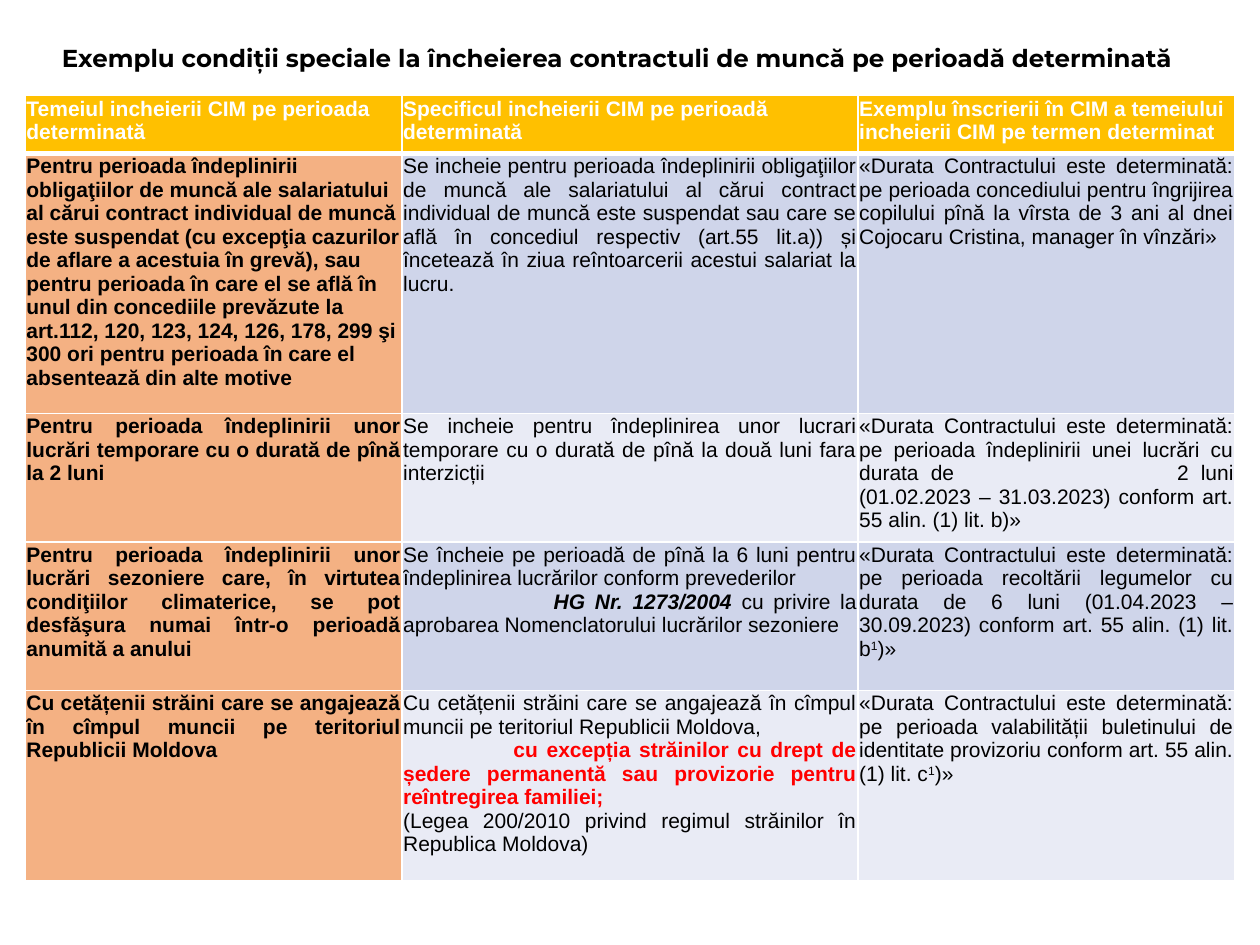
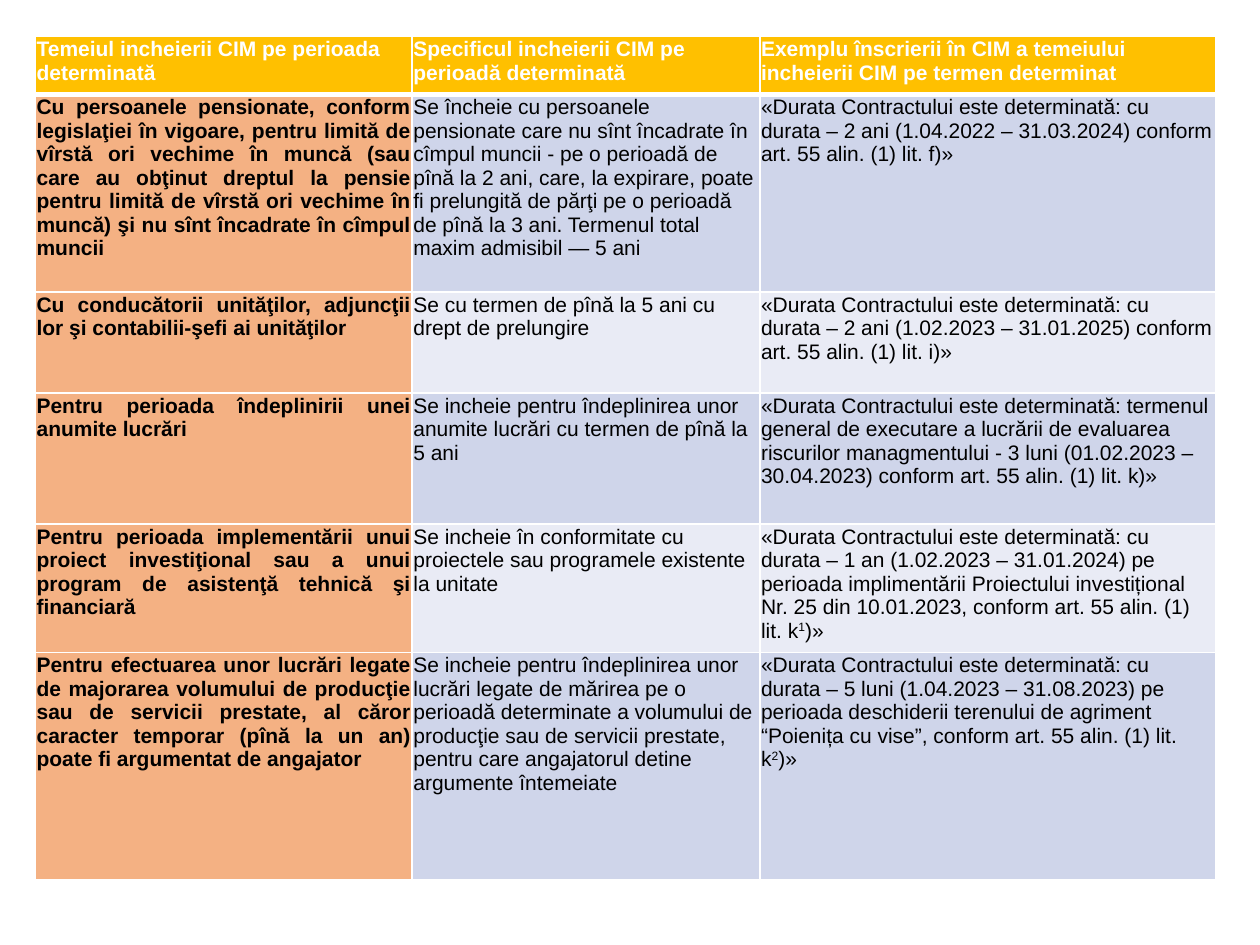
"""Build two slides of tables on fixed-term employment contracts."""
from pptx import Presentation
from pptx.util import Pt
from pptx.dml.color import RGBColor
from pptx.enum import text
from pptx.oxml import parse_xml
from pptx.oxml.ns import nsdecls

HUE = {"head": "FFC000", "basis": "F4B183", "odd": "CFD5EA", "even": "E9EBF5",
       "white": "FFFFFF", "black": "000000", "red": "FF0000"}
ALIGN = {"l": text.PP_ALIGN.LEFT, "j": text.PP_ALIGN.JUSTIFY, "c": text.PP_ALIGN.CENTER}
INDENT = {"/": 86, "!": 63}
TAB = 178
LEAD = "«Durata Contractului este determinată: "


def style(run, face, size, bold, hue):
    font = run.font
    font.name, font.size, font.bold = face, Pt(size), bold
    font.color.rgb = RGBColor.from_string(HUE[hue])


def fill_cell(cell, words, hue, side, bold, ink, base):
    """Marks: | splits runs, ^ raises, / is bold italic, ! is bold red."""
    cell.margin_left = cell.margin_right = cell.margin_top = cell.margin_bottom = Pt(0.72)
    props = cell._tc.get_or_add_tcPr()
    for edge in "LRTB":
        wide = 3 if (edge, base) in (("B", 0), ("T", 1)) else 1
        props.append(parse_xml(
            f'<a:ln{edge} {nsdecls("a")} w="{Pt(wide)}"><a:solidFill>'
            f'<a:srgbClr val="{HUE["white"]}"/></a:solidFill></a:ln{edge}>'))
    cell.fill.solid()
    cell.fill.fore_color.rgb = RGBColor.from_string(HUE[hue])
    frame = cell.text_frame
    for num, line in enumerate(words.split("\n")):
        para = frame.add_paragraph() if num else frame.paragraphs[0]
        para.alignment = ALIGN[side]
        form = para._p.get_or_add_pPr()
        if line[1:2] in INDENT:
            form.set("indent", str(Pt(INDENT[line[1]])))
        if "\t" in line:
            form.append(parse_xml(f'<a:tabLst {nsdecls("a")}>'
                                  f'<a:tab pos="{Pt(TAB)}" algn="l"/></a:tabLst>'))
        for part in filter(None, line.split("|")):
            mark = part[0] if part[0] in "^/!" else ""
            run = para.add_run()
            run.text = part[len(mark):]
            style(run, "Arial", 12, bold or mark in ("/", "!"),
                  "red" if mark == "!" else ink)
            if mark == "/":
                run.font.italic = True
            if mark == "^":
                run._r.get_or_add_rPr().set("baseline", "30000")


HEAD = ("Temeiul incheierii CIM pe perioada determinată",
        "Specificul incheierii CIM pe perioadă determinată",
        "Exemplu înscrierii în CIM a temeiului incheierii CIM pe termen determinat")

FIRST = [
    ("Pentru perioada îndeplinirii obligaţiilor de muncă ale salariatului al cărui contract "
     "individual de muncă este suspendat (cu excepţia cazurilor de aflare a acestuia în grevă), "
     "sau pentru perioada în care el se află în unul din concediile prevăzute la art.112, 120, "
     "123, 124, 126, 178, 299 şi 300 ori pentru perioada în care el absentează din alte motive",
     "Se incheie pentru perioada îndeplinirii obligaţiilor de muncă ale salariatului al cărui "
     "contract individual de muncă este suspendat sau care se află în concediul respectiv "
     "(art.55 lit.a)) și încetează în ziua reîntoarcerii acestui salariat la lucru.",
     LEAD + "pe perioada concediului pentru îngrijirea copilului pînă la vîrsta de 3 ani al "
     "dnei Cojocaru Cristina, manager în vînzări»"),
    ("Pentru perioada îndeplinirii unor lucrări temporare cu o durată de pînă la 2 luni",
     "Se incheie pentru îndeplinirea unor lucrari temporare cu o durată de pînă la două luni "
     "fara interzicții",
     LEAD + "pe perioada îndeplinirii unei lucrări cu durata de\t2 luni "
     "(01.02.2023 – 31.03.2023) conform art. 55 alin. (1) lit. b)»"),
    ("Pentru perioada îndeplinirii unor lucrări sezoniere care, în virtutea condiţiilor "
     "climaterice, se pot desfăşura numai într-o perioadă anumită a anului",
     "Se încheie pe perioadă de pînă la 6 luni pentru îndeplinirea lucrărilor conform "
     "prevederilor\n|/HG Nr. 1273/2004 |cu privire la aprobarea Nomenclatorului lucrărilor "
     "sezoniere",
     LEAD + "pe perioada recoltării legumelor cu durata de 6 luni (01.04.2023 – 30.09.2023) "
     "conform art. 55 alin. (1) lit. b|^1|)»"),
    ("Cu cetățenii străini care se angajează în cîmpul muncii pe teritoriul Republicii Moldova",
     "Cu cetățenii străini care se angajează în cîmpul muncii pe teritoriul Republicii Moldova,"
     "\n|!cu excepția străinilor cu drept de ședere permanentă sau provizorie pentru "
     "reîntregirea familiei;\n(Legea 200/2010 privind regimul străinilor în Republica Moldova)",
     LEAD + "pe perioada valabilității buletinului de identitate provizoriu conform art. 55 "
     "alin. (1) lit. c|^1|)»"),
]

SECOND = [
    ("Cu persoanele pensionate, conform legislaţiei în vigoare, pentru limită de vîrstă ori "
     "vechime în muncă (sau care au obţinut dreptul la pensie pentru limită de vîrstă ori "
     "vechime în muncă) şi nu sînt încadrate în cîmpul muncii",
     "Se încheie cu persoanele pensionate care nu sînt încadrate în cîmpul muncii - pe o "
     "perioadă de pînă la 2 ani, care, la expirare, poate fi prelungită de părţi pe o perioadă "
     "de pînă la 3 ani. Termenul total maxim admisibil — 5 ani",
     LEAD + "cu durata – 2 ani (1.04.2022 – 31.03.2024) conform art. 55 alin. (1) lit. f)»"),
    ("Cu conducătorii unităţilor, adjuncţii lor şi contabilii-şefi ai unităţilor",
     "Se cu termen de pînă la 5 ani cu drept de prelungire",
     LEAD + "cu durata – 2 ani (1.02.2023 – 31.01.2025) conform art. 55 alin. (1) lit. i)»"),
    ("Pentru perioada îndeplinirii unei anumite lucrări",
     "Se incheie pentru îndeplinirea unor anumite lucrări cu termen de pînă la 5 ani",
     LEAD + "termenul general de executare a lucrării de evaluarea riscurilor managmentului "
     "- 3 luni (01.02.2023 – 30.04.2023) conform art. 55 alin. (1) lit. k)»"),
    ("Pentru perioada implementării unui proiect investiţional sau a unui program de asistenţă "
     "tehnică şi financiară",
     "Se incheie în conformitate cu proiectele sau programele existente la unitate",
     LEAD + "cu durata – 1 an (1.02.2023 – 31.01.2024) pe perioada implimentării Proiectului "
     "investițional Nr. 25 din 10.01.2023, conform art. 55 alin. (1) lit. k|^1|)»"),
    ("Pentru efectuarea unor lucrări legate de majorarea volumului de producţie sau de servicii "
     "prestate, al căror caracter temporar (pînă la un an) poate fi argumentat de angajator",
     "Se incheie pentru îndeplinirea unor lucrări legate de mărirea pe o perioadă determinate a "
     "volumului de producţie sau de servicii prestate, pentru care angajatorul detine argumente "
     "întemeiate",
     LEAD + "cu durata – 5 luni (1.04.2023 – 31.08.2023) pe perioada deschiderii terenului de "
     "agriment “Poienița cu vise”, conform art. 55 alin. (1) lit. k|^2|)»"),
]

PAGES = [
    ("Exemplu condiții speciale la încheierea contractuli de muncă pe perioadă determinată",
     14.4, 54.7, (215.3, 260.6, 215.3), (33, 148.5, 73.6, 84.8, 109), ("ljj", "jjj"), FIRST),
    (None, 20.2, 20.9, (215.3, 198.7, 260.6), (33, 113, 57.6, 74.9, 69.1, 130),
     ("jll", "jll"), SECOND),
]

deck = Presentation()
deck.slide_width, deck.slide_height = Pt(720), Pt(540)

for title, left, top, wides, highs, sides, body in PAGES:
    slide = deck.slides.add_slide(deck.slide_layouts[6])
    rows = [HEAD] + body
    grid = slide.shapes.add_table(len(rows), len(HEAD), Pt(left), Pt(top),
                                  Pt(sum(wides)), Pt(sum(highs))).table
    for col, wide in zip(grid.columns, wides):
        col.width = Pt(wide)
    for r, (row, high) in enumerate(zip(rows, highs)):
        grid.rows[r].height = Pt(high)
        for c, words in enumerate(row):
            band = "odd" if r % 2 else "even"
            hue = "head" if r == 0 else "basis" if c == 0 else band
            side = "l" if r == 0 else sides[r > 1][c]
            ink = "black" if r else "white"
            fill_cell(grid.cell(r, c), words, hue, side, r == 0 or c == 0, ink, r)
    if title:
        box = slide.shapes.add_textbox(Pt(0), Pt(19), Pt(705.6), Pt(28)).text_frame
        box.word_wrap = True
        box.vertical_anchor = text.MSO_ANCHOR.MIDDLE
        box.text = title
        box.paragraphs[0].alignment = ALIGN["c"]
        style(box.paragraphs[0].runs[0], "Montserrat", 14, True, "black")

deck.save("out.pptx")
